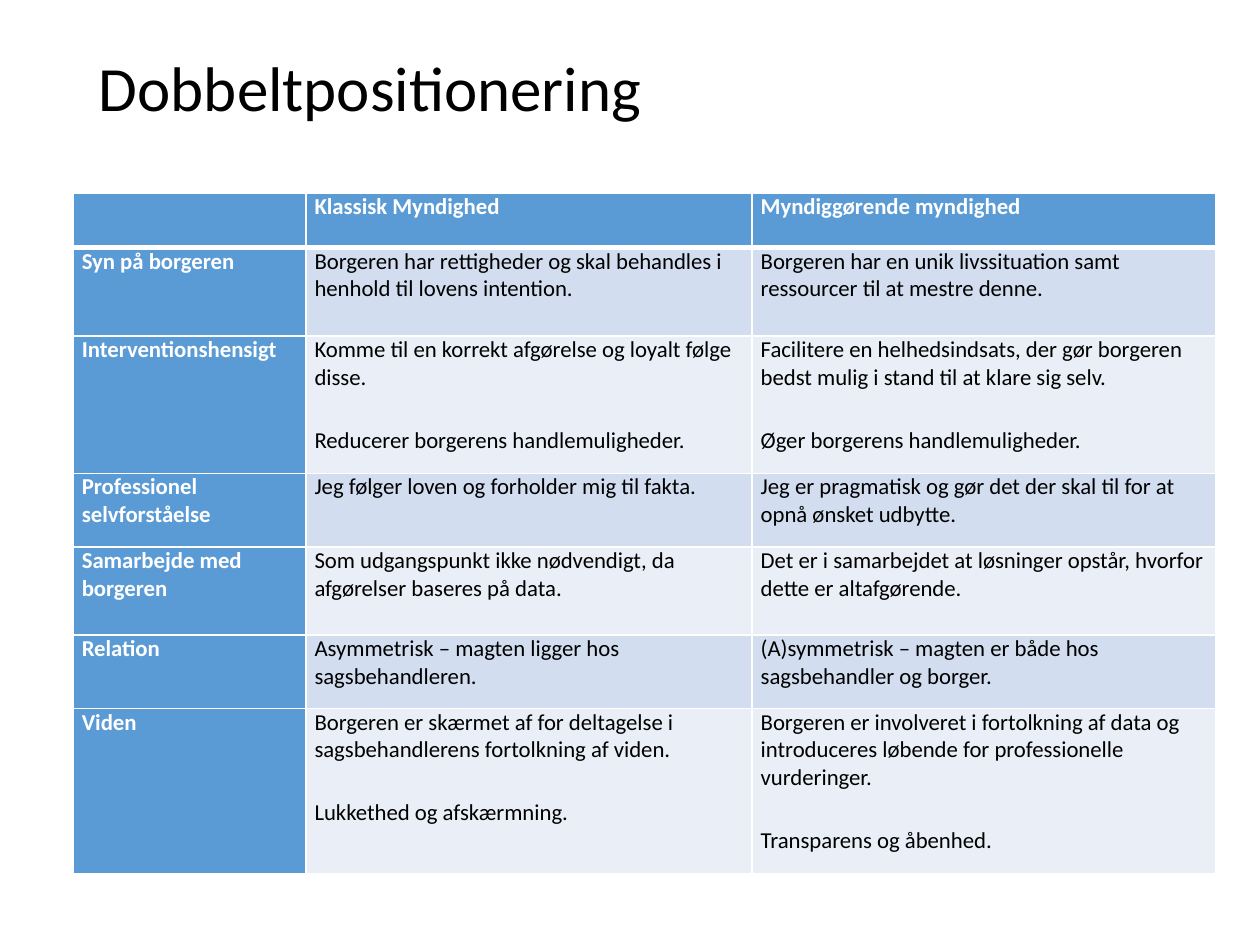
from lxml.etree import SubElement
from pptx import Presentation
from pptx.dml.color import RGBColor
from pptx.enum.text import MSO_ANCHOR as Anchor
from pptx.oxml.ns import qn
from pptx.util import Pt

TITLE = "Dobbeltpositionering"
ROWS = [
    (31, [], ["Klassisk Myndighed"], ["Myndiggørende myndighed"]),
    (50.5, ["Syn på borgeren"],
     ["Borgeren har rettigheder og skal behandles i henhold til lovens intention."],
     ["Borgeren har en unik livssituation samt ressourcer til at mestre denne."]),
    (78.5, ["Interventionshensigt"],
     ["Komme til en korrekt afgørelse og loyalt følge disse.",
      "Reducerer borgerens handlemuligheder."],
     ["Facilitere en helhedsindsats, der gør borgeren bedst mulig i stand til at klare sig selv.",
      "Øger borgerens handlemuligheder."]),
    (42, ["Professionel selvforståelse"],
     ["Jeg følger loven og forholder mig til fakta."],
     ["Jeg er pragmatisk og gør det der skal til for at opnå ønsket udbytte."]),
    (50.5, ["Samarbejde med borgeren"],
     ["Som udgangspunkt ikke nødvendigt, da afgørelser baseres på data."],
     ["Det er i samarbejdet at løsninger opstår, hvorfor dette er altafgørende."]),
    (42, ["Relation"],
     ["Asymmetrisk – magten ligger hos sagsbehandleren."],
     ["(A)symmetrisk – magten er både hos sagsbehandler og borger."]),
    (94.5, ["Viden"],
     ["Borgeren er skærmet af for deltagelse i sagsbehandlerens fortolkning af viden.",
      "Lukkethed og afskærmning."],
     ["Borgeren er involveret i fortolkning af data og introduceres løbende for professionelle vurderinger.",
      "Transparens og åbenhed."]),
]
COL_WIDTHS = [133, 255, 265]
TABLE_LEFT, TABLE_TOP = 41.75, 110.5


class Theme:
    font = "Calibri"
    title_size, body_size = 36, 13
    text, inverse, line = "000000", "FFFFFF", "FFFFFF"
    head, bands = "5B9BD5", ("EAEFF7", "D2DEEF")
    thin, thick = 1, 3


def write(tf, paragraphs, size, color, bold=False, gap=0, spacing=None):
    for i, text in enumerate(paragraphs):
        p = tf.add_paragraph() if i else tf.paragraphs[0]
        p.space_before, p.space_after = Pt(gap if i else 0), Pt(gap)
        p.line_spacing = spacing
        r = p.add_run()
        r.text = text
        r.font.name, r.font.size, r.font.bold = Theme.font, Pt(size), bold
        r.font.color.rgb = RGBColor.from_string(color)


def set_borders(cell, **widths):
    tc_pr = cell._tc.get_or_add_tcPr()
    for side in "LRTB":
        ln = SubElement(tc_pr, qn(f"a:ln{side}"), w=str(Pt(widths.get(side, Theme.thin))))
        fill = SubElement(ln, qn("a:solidFill"))
        SubElement(fill, qn("a:srgbClr"), val=Theme.line)


def format_cell(cell, row, col, paragraphs):
    is_head = row == 0 or col == 0
    cell.margin_left = cell.margin_right = Pt(5)
    cell.margin_top = cell.margin_bottom = Pt(0)
    set_borders(cell, **{0: {"B": Theme.thick}, 1: {"T": Theme.thick}}.get(row, {}))
    cell.fill.solid()
    cell.fill.fore_color.rgb = RGBColor.from_string(Theme.head if is_head else Theme.bands[row % 2])
    write(cell.text_frame, paragraphs, Theme.body_size,
          Theme.inverse if is_head else Theme.text, bold=is_head, gap=10)


def add_comparison(s):
    height = sum(row[0] for row in ROWS)
    table = s.shapes.add_table(len(ROWS), len(COL_WIDTHS), Pt(TABLE_LEFT), Pt(TABLE_TOP),
                               Pt(sum(COL_WIDTHS)), Pt(height)).table
    table.first_row = table.horz_banding = False
    for column, width in zip(table.columns, COL_WIDTHS):
        column.width = Pt(width)
    for i, (row_height, *cells) in enumerate(ROWS):
        table.rows[i].height = Pt(row_height)
        for j, paragraphs in enumerate(cells):
            format_cell(table.cell(i, j), i, j, paragraphs)


def main():
    """Build the slide comparing two kinds of authority."""
    prs = Presentation()
    prs.slide_width, prs.slide_height = Pt(720), Pt(540)
    s = prs.slides.add_slide(prs.slide_layouts[6])
    add_comparison(s)
    tf = s.shapes.add_textbox(Pt(49.5), Pt(28.8), Pt(621), Pt(46.8)).text_frame
    tf.word_wrap, tf.vertical_anchor = True, Anchor.MIDDLE
    write(tf, [TITLE], Theme.title_size, Theme.text, spacing=0.9)
    prs.save("out.pptx")


if __name__ == "__main__":
    main()
